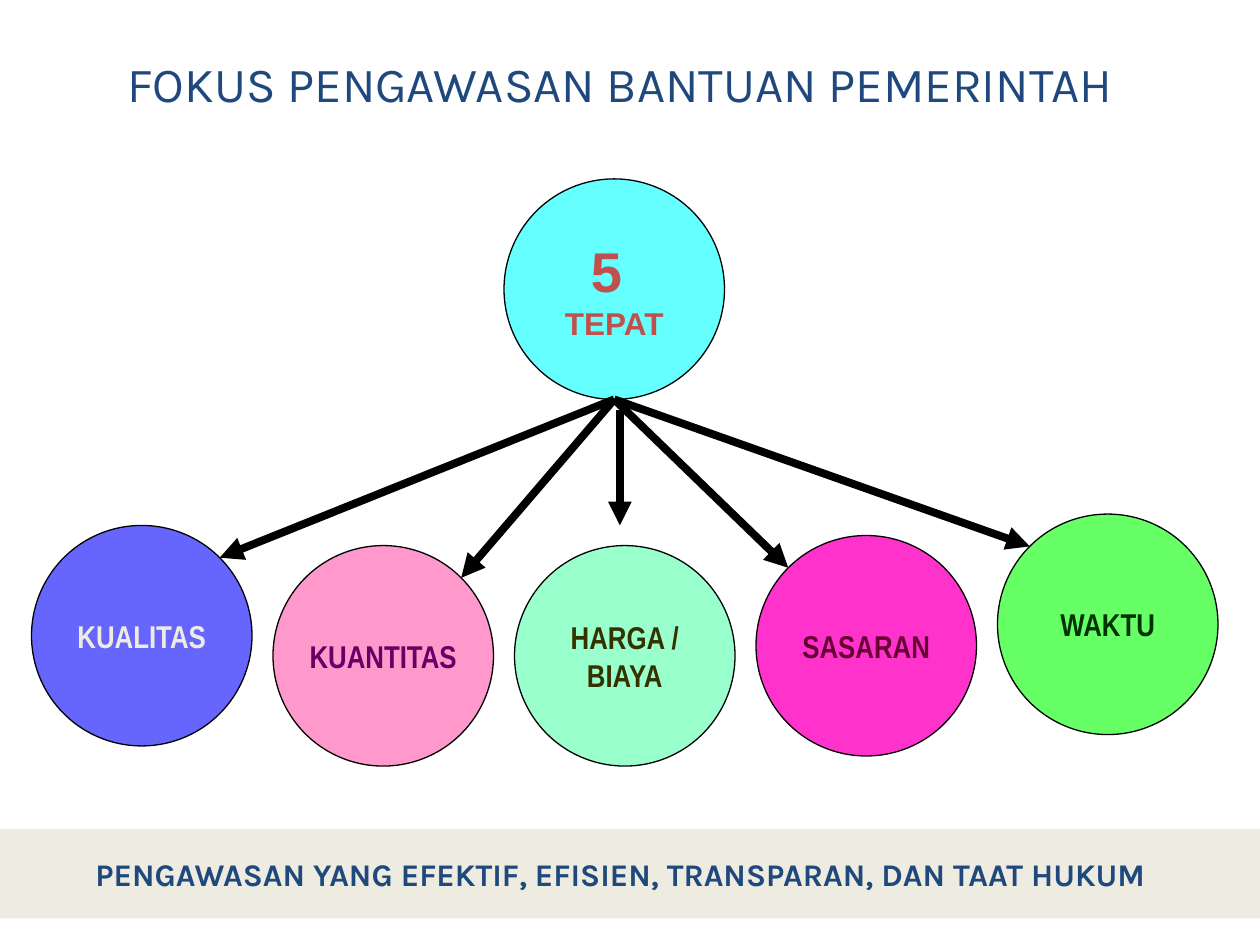
import math

from lxml import etree
from pptx import Presentation
from pptx import util as u
from pptx.dml.color import RGBColor
from pptx.enum import shapes, text
from pptx.oxml.ns import qn

COLORS = {
    "navy": "1F497D", "black": "000000", "beige": "EEECE1",
    "cyan": "66FFFF", "red": "C0504D",
    "blue": "6666FF", "pink": "FF99CC", "purple": "660066",
    "mint": "99FFCC", "olive": "333300",
    "magenta": "FF33CC", "maroon": "660033",
    "green": "66FF66", "forest": "003300",
}
DIAMETER = 1.75
RADIUS = DIAMETER / 2
HUB_LEFT, HUB_TOP = 4, 1.42
FIRST_LEFT, STEP = 0.25, 23 / 12


def color(name):
    return RGBColor.from_string(COLORS[name])


def write(box, lines, font, ink, bold=True):
    """Fill a shape with centred paragraphs given as (wording, size) pairs."""
    frame = box.text_frame
    frame.vertical_anchor = text.MSO_ANCHOR.MIDDLE
    for number, (wording, size) in enumerate(lines):
        para = frame.add_paragraph() if number else frame.paragraphs[0]
        para.alignment = text.PP_ALIGN.CENTER
        span = para.add_run()
        span.text = wording
        span.font.name = font
        span.font.size = u.Pt(size)
        span.font.bold = bold
        span.font.color.rgb = color(ink)


deck = Presentation()
deck.slide_width, deck.slide_height = u.Inches(10), u.Inches(7.5)
page = deck.slides.add_slide(deck.slide_layouts[6])

title = page.shapes.add_textbox(u.Inches(0.67), u.Inches(0), u.Inches(8.5), u.Inches(1.31))
title.text_frame.word_wrap = True
write(title, [("FOKUS PENGAWASAN BANTUAN PEMERINTAH", 28)], "Karla", "navy", bold=False)

# Hub first, then the five targets from left to right
circles = [(HUB_LEFT, HUB_TOP, "cyan", "red", "Arial", [("5 ", 32), ("TEPAT", 18)])]
targets = [
    (4.17, "blue", "beige", ["KUALITAS"]),
    (4.33, "pink", "purple", ["KUANTITAS"]),
    (4.33, "mint", "olive", ["HARGA /", "BIAYA"]),
    (4.25, "magenta", "maroon", ["SASARAN"]),
    (4.08, "green", "forest", ["WAKTU"]),
]
for index, (top, fill, ink, words) in enumerate(targets):
    lines = [(word, 18) for word in words]
    circles.append((FIRST_LEFT + index * STEP, top, fill, ink, "Arial Narrow", lines))

for left, top, fill, ink, font, lines in circles:
    circle = page.shapes.add_shape(
        shapes.MSO_SHAPE.OVAL, u.Inches(left), u.Inches(top),
        u.Inches(DIAMETER), u.Inches(DIAMETER))
    circle.shadow.inherit = False
    circle.fill.solid()
    circle.fill.fore_color.rgb = color(fill)
    circle.line.color.rgb = color("black")
    circle.line.width = u.Pt(0.75)
    circle.text_frame.word_wrap = False
    write(circle, lines, font, ink)

# Arrows run from the foot of the hub to the near upper edge of each outer circle
hub_foot = (HUB_LEFT + RADIUS, HUB_TOP + DIAMETER)
diagonal = RADIUS * math.sqrt(0.5)
arrows = [((4.92, 3.25), (4.92, 4.17))]
for index, side in ((0, 1), (1, 1), (3, -1), (4, -1)):
    center_x = FIRST_LEFT + index * STEP + RADIUS
    center_y = targets[index][0] + RADIUS
    arrows.append((hub_foot, (center_x + side * diagonal, center_y - diagonal)))

for start, end in arrows:
    arrow = page.shapes.add_connector(
        shapes.MSO_CONNECTOR.STRAIGHT, *(u.Inches(value) for value in start + end))
    arrow.line.color.rgb = color("black")
    arrow.line.width = u.Pt(4.5)
    etree.SubElement(arrow.line._get_or_add_ln(), qn("a:tailEnd"), type="triangle")
    etree.SubElement(arrow._element.spPr, qn("a:effectLst"))

band = page.shapes.add_shape(
    shapes.MSO_SHAPE.RECTANGLE, u.Inches(0), u.Inches(6.58), u.Inches(10), u.Inches(0.71))
band.shadow.inherit = False
band.fill.solid()
band.fill.fore_color.rgb = color("beige")
band.line.fill.background()
band.text_frame.word_wrap = True
band.text_frame.margin_right = u.Inches(0.25)
write(band, [("PENGAWASAN YANG EFEKTIF, EFISIEN, TRANSPARAN, DAN TAAT HUKUM", 18)], "Karla", "navy")

deck.save("out.pptx")
